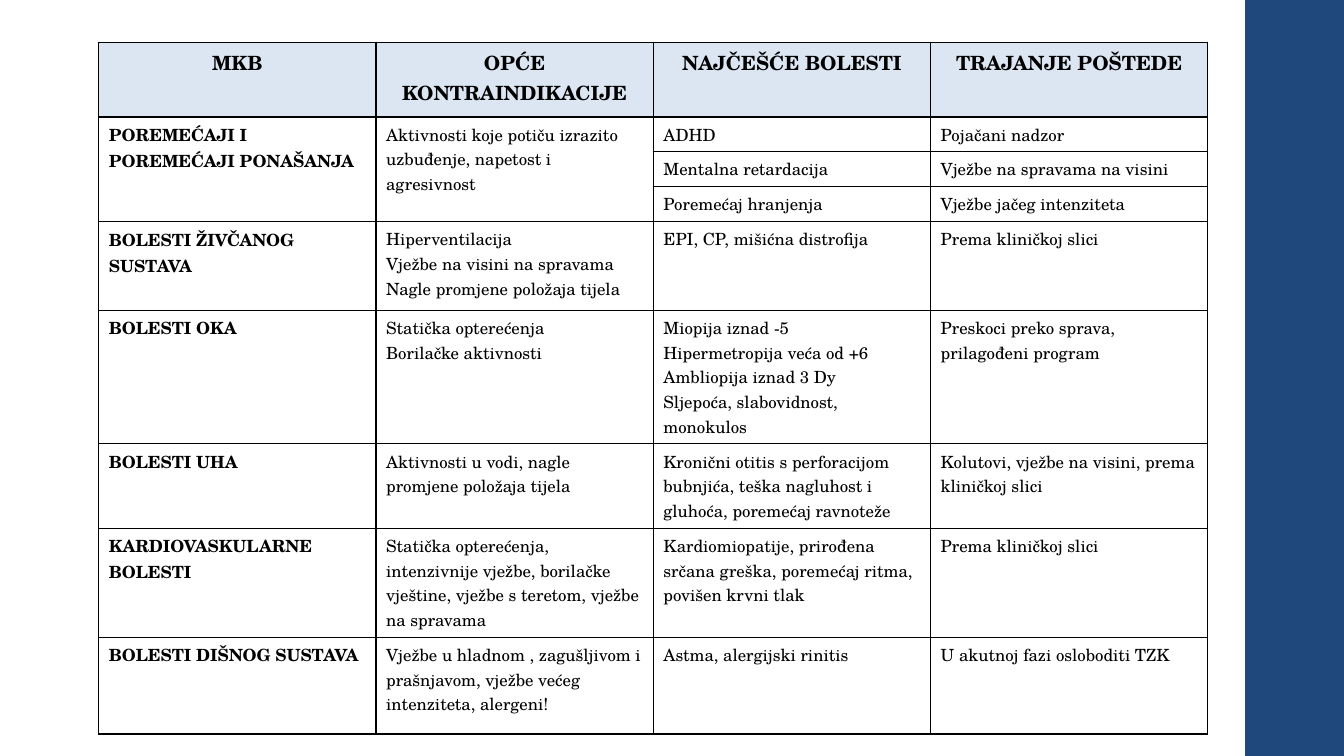
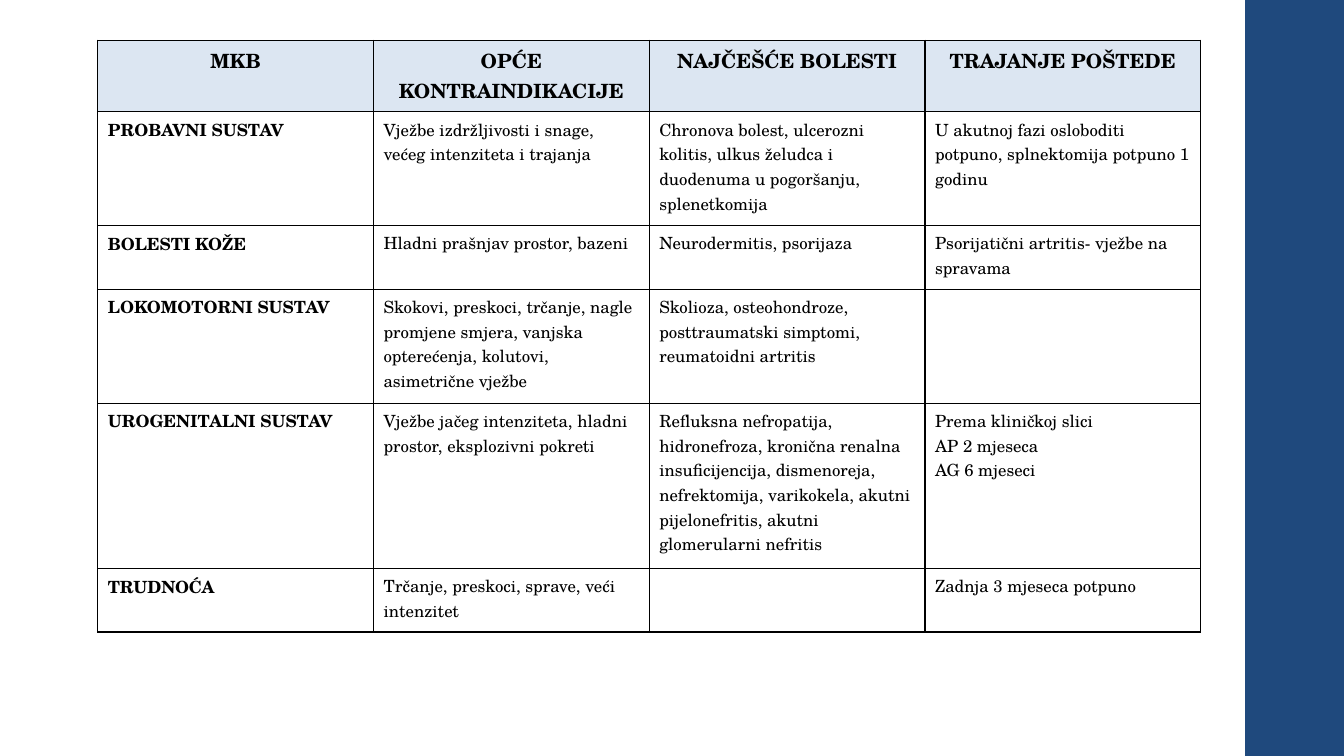
from dataclasses import dataclass

import pptx
import pptx.dml.color
import pptx.enum.shapes
import pptx.enum.text
import pptx.oxml
import pptx.oxml.ns
import pptx.slide
import pptx.table
import pptx.util

EMU_PER_PX = 9144
PAGE_WIDTH, PAGE_HEIGHT = 1333, 750
BAND_LEFT = 1235


@dataclass(frozen=True)
class Theme:
    band: str = "1F497D"
    header_fill: str = "DCE6F2"
    ink: str = "000000"
    font: str = "TeX Gyre Schola"
    header_size: int = 14
    body_size: int = 12
    border_width: int = 1


@dataclass(frozen=True)
class Row:
    height: int
    texts: tuple[str, str, str, str]


@dataclass(frozen=True)
class Merge:
    column: int
    first_row: int
    last_row: int


@dataclass(frozen=True)
class DiseaseTable:
    left: int
    top: int
    width: int
    header_height: int
    rows: tuple[Row, ...]
    merges: tuple[Merge, ...] = ()


THEME = Theme()
HEADERS = ("MKB", "OPĆE KONTRAINDIKACIJE", "NAJČEŠĆE BOLESTI", "TRAJANJE POŠTEDE")

TABLES = (
    DiseaseTable(98, 42, 1100, 74, (
        Row(32, (
            "POREMEĆAJI I POREMEĆAJI PONAŠANJA",
            "Aktivnosti koje potiču izrazito uzbuđenje, napetost i agresivnost",
            "ADHD",
            "Pojačani nadzor")),
        Row(32, ("", "", "Mentalna retardacija", "Vježbe na spravama na visini")),
        Row(32, ("", "", "Poremećaj hranjenja", "Vježbe jačeg intenziteta")),
        Row(88, (
            "BOLESTI ŽIVČANOG SUSTAVA",
            "Hiperventilacija\nVježbe na visini na spravama\nNagle promjene položaja tijela",
            "EPI, CP, mišićna distrofija",
            "Prema kliničkoj slici")),
        Row(117, (
            "BOLESTI OKA",
            "Statička opterećenja\nBorilačke aktivnosti",
            "Miopija iznad -5\nHipermetropija veća od +6\nAmbliopija iznad 3 Dy\n"
            "Sljepoća, slabovidnost, monokulos",
            "Preskoci preko sprava, prilagođeni program")),
        Row(75, (
            "BOLESTI UHA",
            "Aktivnosti u vodi, nagle promjene položaja tijela",
            "Kronični otitis s perforacijom bubnjića, teška nagluhost i gluhoća, "
            "poremećaj ravnoteže",
            "Kolutovi, vježbe na visini, prema kliničkoj slici")),
        Row(96, (
            "KARDIOVASKULARNE BOLESTI",
            "Statička opterećenja, intenzivnije vježbe, borilačke vještine, "
            "vježbe s teretom, vježbe na spravama",
            "Kardiomiopatije, prirođena srčana greška, poremećaj ritma, povišen krvni tlak",
            "Prema kliničkoj slici")),
        Row(96, (
            "BOLESTI DIŠNOG SUSTAVA",
            "Vježbe u hladnom , zagušljivom i prašnjavom, vježbe većeg intenziteta, alergeni!",
            "Astma, alergijski rinitis",
            "U akutnoj fazi osloboditi TZK")),
    ), (Merge(0, 1, 3), Merge(1, 1, 3))),
    DiseaseTable(97, 40, 1094, 71, (
        Row(113, (
            "PROBAVNI SUSTAV",
            "Vježbe izdržljivosti i snage, većeg intenziteta i trajanja",
            "Chronova bolest, ulcerozni kolitis, ulkus želudca i duodenuma u pogoršanju, "
            "splenetkomija",
            "U akutnoj fazi osloboditi potpuno, splnektomija potpuno 1 godinu")),
        Row(63, (
            "BOLESTI KOŽE",
            "Hladni prašnjav prostor, bazeni",
            "Neurodermitis, psorijaza",
            "Psorijatični artritis- vježbe na spravama")),
        Row(113, (
            "LOKOMOTORNI SUSTAV",
            "Skokovi, preskoci, trčanje, nagle promjene smjera, vanjska opterećenja, "
            "kolutovi, asimetrične vježbe",
            "Skolioza, osteohondroze, posttraumatski simptomi, reumatoidni artritis",
            "")),
        Row(164, (
            "UROGENITALNI SUSTAV",
            "Vježbe jačeg intenziteta, hladni prostor, eksplozivni pokreti",
            "Refluksna nefropatija, hidronefroza, kronična renalna insuficijencija, "
            "dismenoreja, nefrektomija, varikokela, akutni pijelonefritis, "
            "akutni glomerularni nefritis",
            "Prema kliničkoj slici\nAP 2 mjeseca\nAG 6 mjeseci")),
        Row(63, (
            "TRUDNOĆA",
            "Trčanje, preskoci, sprave, veći intenzitet",
            "",
            "Zadnja 3 mjeseca potpuno")),
    )),
)


def px(length: int) -> pptx.util.Emu:
    return pptx.util.Emu(length * EMU_PER_PX)


def color(value: str) -> pptx.dml.color.RGBColor:
    return pptx.dml.color.RGBColor.from_string(value)


def draw_band(page: pptx.slide.Slide) -> None:
    band = page.shapes.add_shape(
        pptx.enum.shapes.MSO_SHAPE.RECTANGLE,
        px(BAND_LEFT), px(0), px(PAGE_WIDTH - BAND_LEFT), px(PAGE_HEIGHT))
    band.shadow.inherit = False
    band.fill.solid()
    band.fill.fore_color.rgb = color(THEME.band)
    band.line.fill.background()


def add_borders(cell: pptx.table._Cell) -> None:
    properties = cell._tc.get_or_add_tcPr()
    width = pptx.util.Pt(THEME.border_width)
    for side in ("lnL", "lnR", "lnT", "lnB"):
        properties.append(pptx.oxml.parse_xml(
            f'<a:{side} {pptx.oxml.ns.nsdecls("a")} w="{width}"><a:solidFill>'
            f'<a:srgbClr val="{THEME.ink}"/></a:solidFill></a:{side}>'))


def fill_cell(cell: pptx.table._Cell, text: str, is_header: bool, is_bold: bool) -> None:
    add_borders(cell)
    if is_header:
        cell.fill.solid()
        cell.fill.fore_color.rgb = color(THEME.header_fill)
    else:
        cell.fill.background()
    cell.text_frame.text = text
    for para in cell.text_frame.paragraphs:
        if is_header:
            para.alignment = pptx.enum.text.PP_ALIGN.CENTER
        for span in para.runs:
            span.font.name = THEME.font
            span.font.size = pptx.util.Pt(THEME.header_size if is_header else THEME.body_size)
            span.font.bold = is_bold
            span.font.color.rgb = color(THEME.ink)


def draw_table(page: pptx.slide.Slide, content: DiseaseTable) -> None:
    rows = (Row(content.header_height, HEADERS), *content.rows)
    height = sum(row.height for row in rows)
    table = page.shapes.add_table(
        len(rows), len(HEADERS),
        px(content.left), px(content.top), px(content.width), px(height)).table
    table.first_row = False
    table.horz_banding = False
    for row_index, row in enumerate(rows):
        table.rows[row_index].height = px(row.height)
        for column_index, text in enumerate(row.texts):
            is_header = row_index == 0
            fill_cell(table.cell(row_index, column_index), text,
                      is_header, is_header or column_index == 0)
    for merge in content.merges:
        table.cell(merge.first_row, merge.column).merge(
            table.cell(merge.last_row, merge.column))


def main() -> None:
    deck = pptx.Presentation()
    deck.slide_width, deck.slide_height = px(PAGE_WIDTH), px(PAGE_HEIGHT)
    blank_layout = deck.slide_layouts[6]
    for content in TABLES:
        page = deck.slides.add_slide(blank_layout)
        draw_band(page)
        draw_table(page, content)
    deck.save("out.pptx")


if __name__ == "__main__":
    main()
